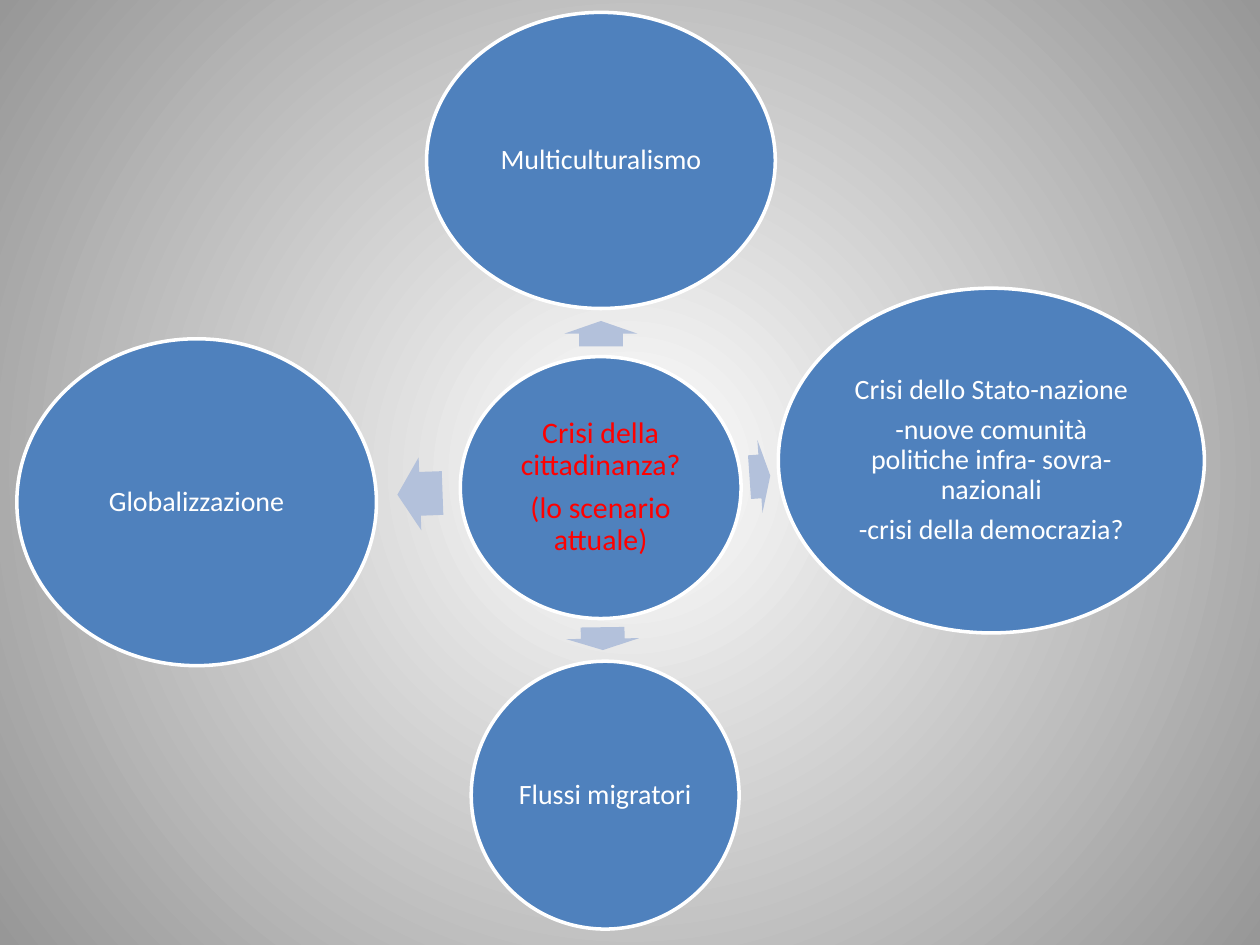
from lxml import etree
from pptx import Presentation
from pptx.dml.color import RGBColor
from pptx.enum.shapes import MSO_SHAPE
from pptx.enum.text import MSO_ANCHOR, PP_ALIGN
from pptx.oxml.ns import qn
from pptx.util import Cm, Pt

ELLIPSE, ARROW = MSO_SHAPE.OVAL, MSO_SHAPE.RIGHT_ARROW
MIDDLE, CENTER = MSO_ANCHOR.MIDDLE, PP_ALIGN.CENTER

FONT = "Calibri"
ARROW_WIDTH = 1.47
COLORS = {
    "circle": "4F81BD",
    "arrow": "B3C1DB",
    "white": "FFFFFF",
    "edge": "979797",
    "topic": "FF0000",
}

# Outer circles: left, top, width, height in cm, then paragraphs
CAUSES = [
    (8.6, 0.25, 7.03, 5.97, ["Multiculturalismo"]),
    (15.69, 5.81, 8.59, 6.95, [
        "Crisi dello Stato-nazione",
        "-nuove comunità politiche infra- sovra-nazionali",
        "-crisi della democrazia?",
    ]),
    (9.5, 13.33, 5.4, 5.4, ["Flussi migratori"]),
    (0.34, 6.83, 7.25, 6.59, ["Globalizzazione"]),
]

# Arrows from the centre: left, top, length in cm, then rotation
ARROWS = [
    (11.86, 5.99, 0.51, 270),
    (15.11, 8.87, 0.42, 356),
    (11.92, 12.14, 0.46, 89.2),
    (8.01, 9.22, 0.91, 177.9),
]


def color(name):
    return RGBColor.from_string(COLORS[name])


def set_background(page):
    """Radial gradient, light in the middle."""
    fill = page.background.fill
    fill.gradient()
    for stop, name in zip(fill.gradient_stops, ("white", "edge")):
        stop.color.rgb = color(name)
    gradient = page.element.find(".//" + qn("a:gradFill"))
    gradient.remove(gradient.find(qn("a:lin")))
    radial = etree.SubElement(gradient, qn("a:path"), path="circle")
    etree.SubElement(radial, qn("a:fillToRect"),
                     dict.fromkeys("ltrb", "50000"))


def add_filled(page, kind, left, top, width, height, fill):
    shape = page.shapes.add_shape(kind, Cm(left), Cm(top), Cm(width), Cm(height))
    shape.shadow.inherit = False
    shape.fill.solid()
    shape.fill.fore_color.rgb = color(fill)
    return shape


def add_circle(page, left, top, width, height, lines, size=16, text_color="white"):
    circle = add_filled(page, ELLIPSE, left, top, width, height, "circle")
    circle.line.color.rgb = color("white")
    circle.line.width = Pt(2)

    frame = circle.text_frame
    frame.word_wrap = True
    frame.vertical_anchor = MIDDLE
    frame.margin_left = frame.margin_right = Cm(0.12)
    frame.margin_top = frame.margin_bottom = Cm(0.05)
    for index, line in enumerate(lines):
        para = frame.add_paragraph() if index else frame.paragraphs[0]
        para.text = line
        para.alignment = CENTER
        para.line_spacing = 0.9
        para.space_after = Pt(round(size * 0.35, 1))
        para.font.name = FONT
        para.font.size = Pt(size)
        para.font.color.rgb = color(text_color)


def add_arrow(page, left, top, length, rotation):
    arrow = add_filled(page, ARROW, left, top, length, ARROW_WIDTH, "arrow")
    arrow.line.fill.background()
    arrow.adjustments[0] = 0.6
    arrow.adjustments[1] = 0.5
    arrow.rotation = rotation


def main():
    deck = Presentation()
    deck.slide_width, deck.slide_height = Cm(25.4), Cm(19.05)
    page = deck.slides.add_slide(deck.slide_layouts[6])
    set_background(page)

    # Central topic
    add_circle(page, 9.28, 7.19, 5.66, 5.28,
               ["Crisi della cittadinanza?", "(lo scenario attuale)"],
               size=17, text_color="topic")

    # Arrows and the circles they lead to
    for arrow, cause in zip(ARROWS, CAUSES):
        add_arrow(page, *arrow)
        add_circle(page, *cause)

    deck.save("out.pptx")


if __name__ == "__main__":
    main()
